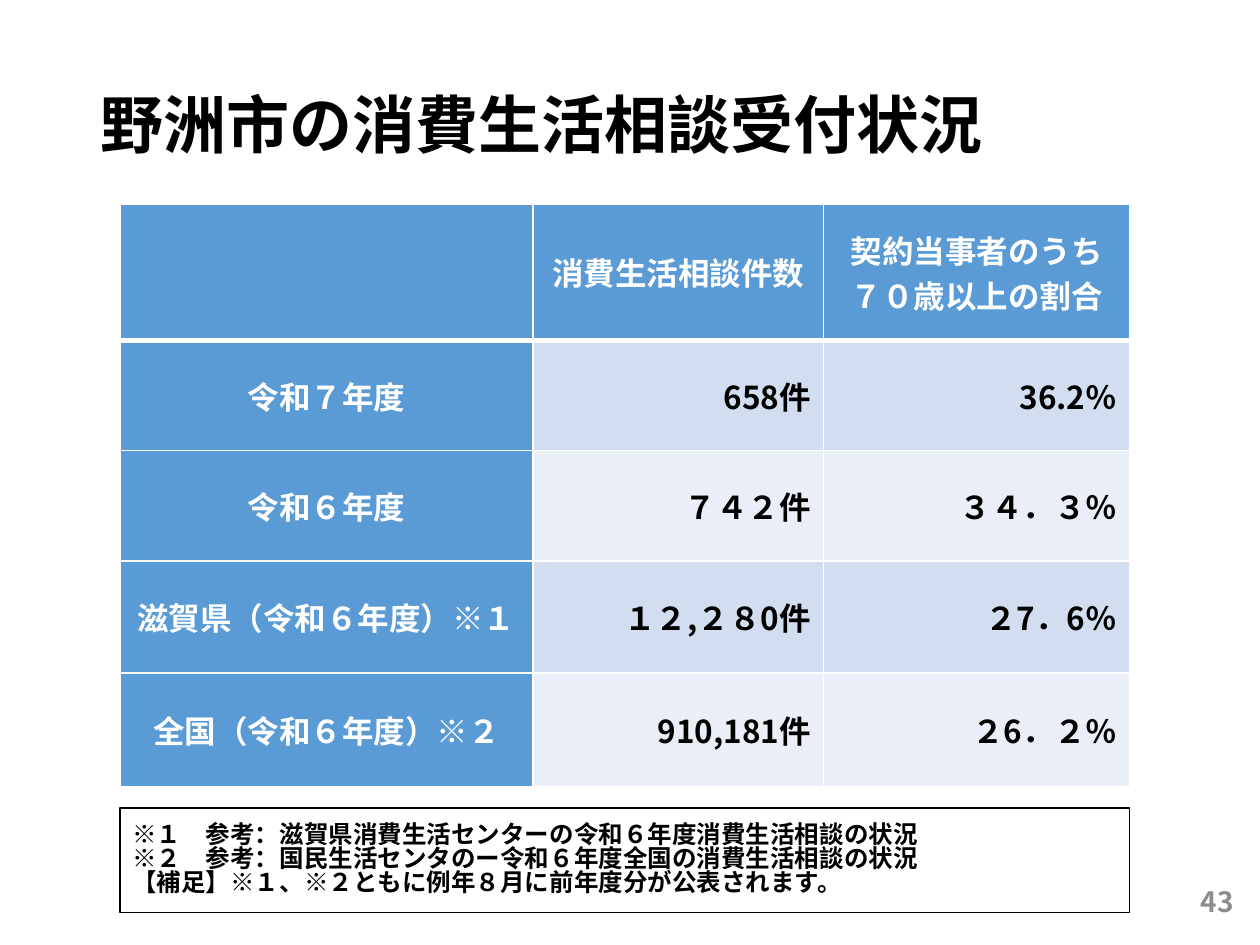
import pptx
import pptx.dml.color
import pptx.enum.shapes
import pptx.enum.text
import pptx.oxml
import pptx.oxml.ns
import pptx.util

Pt = pptx.util.Pt
RGBColor = pptx.dml.color.RGBColor
ALIGN = pptx.enum.text.PP_ALIGN
MIDDLE = pptx.enum.text.MSO_ANCHOR.MIDDLE

BLACK = RGBColor(0x00, 0x00, 0x00)
WHITE = RGBColor(0xFF, 0xFF, 0xFF)
GRAY = RGBColor(0x8C, 0x8C, 0x8C)
BLUE = RGBColor(0x5B, 0x9B, 0xD5)
BAND_DARK = RGBColor(0xD2, 0xDE, 0xEF)
BAND_LIGHT = RGBColor(0xEA, 0xEF, 0xF7)

FONT = "Noto Sans CJK JP"
COLUMN_WIDTHS = [236, 166, 175]
ROW_HEIGHTS = [78, 63, 63, 64, 65]
ROWS = [
    ["", "消費生活相談件数", "契約当事者のうち\n７０歳以上の割合"],
    ["令和７年度", "658件", "36.2％"],
    ["令和６年度", "７４２件", "３４．３％"],
    ["滋賀県（令和６年度）※１", "１２,２８0件", "２7．6％"],
    ["全国（令和６年度）※２", "910,181件", "２6．２％"],
]
NOTES = "\n".join([
    "※１　参考：滋賀県消費生活センターの令和６年度消費生活相談の状況",
    "※２　参考：国民生活センタのー令和６年度全国の消費生活相談の状況",
    "【補足】※１、※２ともに例年８月に前年度分が公表されます。",
])


def write_text(frame, text, size, color, alignment, line_spacing=1.0):
    frame.text = text
    frame.word_wrap = True
    for para in frame.paragraphs:
        para_format = {"alignment": alignment, "line_spacing": line_spacing}
        for name, value in para_format.items():
            setattr(para, name, value)
        for span in para.runs:
            font_format = {"name": FONT, "size": Pt(size), "bold": True}
            for name, value in font_format.items():
                setattr(span.font, name, value)
            span.font.color.rgb = color
            latin = span._r.get_or_add_rPr().find(pptx.oxml.ns.qn("a:latin"))
            latin.addnext(pptx.oxml.parse_xml(
                f'<a:ea {pptx.oxml.ns.nsdecls("a")} typeface="{FONT}"/>'))


def set_borders(cell, widths):
    properties = cell._tc.get_or_add_tcPr()
    for index, (side, width) in enumerate(widths.items()):
        properties.insert(index, pptx.oxml.parse_xml(
            f'<a:ln{side} {pptx.oxml.ns.nsdecls("a")} w="{Pt(width)}">'
            f'<a:solidFill><a:srgbClr val="{WHITE}"/></a:solidFill></a:ln{side}>'))


def add_title(page, left, top, width, height):
    box = page.shapes.title
    place = {"left": left, "top": top, "width": width, "height": height}
    for name, value in place.items():
        setattr(box, name, Pt(value))
    write_text(box.text_frame, "野洲市の消費生活相談受付状況", 36, BLACK, ALIGN.LEFT, 0.9)
    box.text_frame.vertical_anchor = MIDDLE


def add_consultation_table(page, left, top, width, height):
    table = page.shapes.add_table(
        len(ROWS), len(COLUMN_WIDTHS), Pt(left), Pt(top), Pt(width), Pt(height)).table
    for column, share in zip(table.columns, COLUMN_WIDTHS):
        column.width = Pt(width * share / sum(COLUMN_WIDTHS))
    for row, share in zip(table.rows, ROW_HEIGHTS):
        row.height = Pt(height * share / sum(ROW_HEIGHTS))
    for row_index, texts in enumerate(ROWS):
        for column_index, text in enumerate(texts):
            cell = table.cell(row_index, column_index)
            heading = row_index == 0 or column_index == 0
            band = BAND_DARK if row_index % 2 else BAND_LIGHT
            cell.fill.solid()
            cell.fill.fore_color.rgb = BLUE if heading else band
            cell.vertical_anchor = MIDDLE
            if text:
                write_text(cell.text_frame, text, 18, WHITE if heading else BLACK,
                           ALIGN.CENTER if heading else ALIGN.RIGHT)
            set_borders(cell, {"L": 1, "R": 1, "T": 3 if row_index == 1 else 1,
                               "B": 3 if row_index == 0 else 1})


def add_notes_box(page, left, top, width, height):
    box = page.shapes.add_shape(
        pptx.enum.shapes.MSO_SHAPE.RECTANGLE, Pt(left), Pt(top), Pt(width), Pt(height))
    box.shadow.inherit = False
    box.fill.background()
    box.line.color.rgb = BLACK
    box.line.width = Pt(1)
    write_text(box.text_frame, NOTES, 14, BLACK, ALIGN.LEFT, 0.83)
    box.text_frame.vertical_anchor = MIDDLE


def add_page_number(page, left, top, width, height):
    box = page.shapes.add_textbox(Pt(left), Pt(top), Pt(width), Pt(height))
    write_text(box.text_frame, "43", 16, GRAY, ALIGN.RIGHT)
    box.text_frame.vertical_anchor = MIDDLE


def main():
    deck = pptx.Presentation()
    deck.slide_width, deck.slide_height = Pt(720), Pt(540)
    page = deck.slides.add_slide(deck.slide_layouts[5])
    add_title(page, 50, 29, 620, 88)
    add_consultation_table(page, 68.5, 116.5, 577, 333)
    add_page_number(page, 508, 500.5, 204, 29)
    add_notes_box(page, 68.5, 461.5, 577, 60)
    deck.save("out.pptx")


if __name__ == "__main__":
    main()
